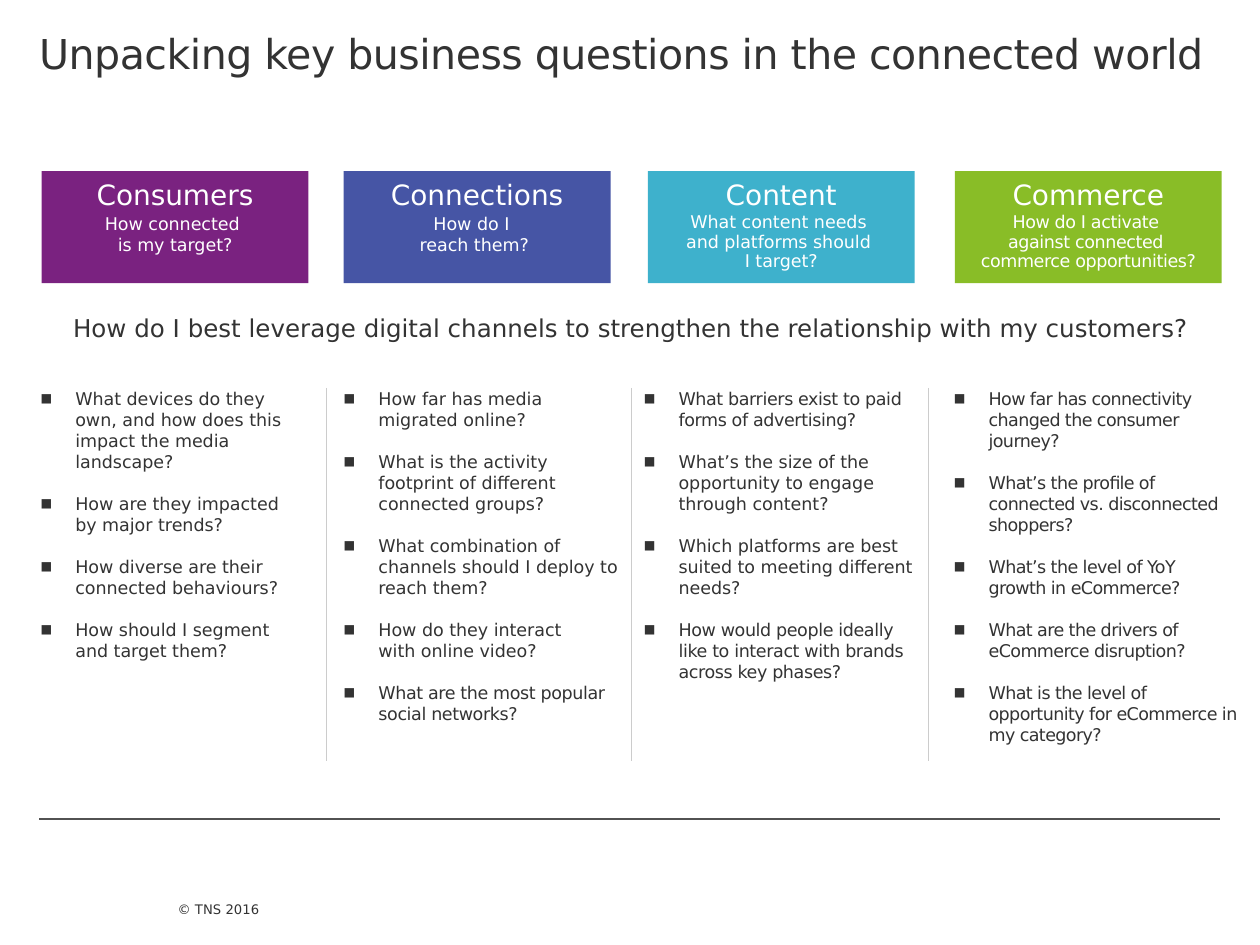
from lxml import etree
from pptx import Presentation
from pptx.dml.color import RGBColor
from pptx.enum.shapes import MSO_CONNECTOR, MSO_SHAPE
from pptx.enum.text import MSO_ANCHOR, PP_ALIGN
from pptx.oxml.ns import qn
from pptx.util import Cm, Pt

RECT = MSO_SHAPE.RECTANGLE
STRAIGHT = MSO_CONNECTOR.STRAIGHT
TOP, BOTTOM = MSO_ANCHOR.TOP, MSO_ANCHOR.BOTTOM
LEFT, CENTER = PP_ALIGN.LEFT, PP_ALIGN.CENTER

COLORS = {
    "text": "333333", "white": "FFFFFF", "rule": "525252", "divider": "CCCCCC",
    "purple": "7A2280", "blue": "4655A5", "cyan": "3EB1CC", "green": "89BD27",
}
CARD_TOP, CARD_W, CARD_H = 3.45, 5.38, 2.26
LIST_TOP, LIST_H = 7.82, 7.0
HEADER_INSETS = (0, 0.2, 0, 0.13)

# Heading, colour, card left, question left, question line spacing (pt),
# question letter spacing (pt), question lines
CARDS = [
    ("Consumers", "purple", 0.84, 0.84, 12, 0, "How connected \nis my target?"),
    ("Connections", "blue", 6.93, 6.87, None, 0, "How do I \nreach them?"),
    ("Content", "cyan", 13.06, 13.06, 11, 0,
     "What content needs \nand platforms should \nI target?"),
    ("Commerce", "green", 19.25, 19.25, 11, -0.2,
     "How do I activate \nagainst connected \ncommerce opportunities?"),
]

# List left, width, items as (text, letter spacing in pt)
LISTS = [
    (0.82, 5.6, [
        ("What devices do they \nown, and how does this impact the media landscape?", 0),
        ("How are they impacted \nby major trends?", 0),
        ("How diverse are their connected behaviours?", 0),
        ("How should I segment \nand target them?", 0),
    ]),
    (6.93, 5.57, [
        ("How far has media migrated online?", 0),
        ("What is the activity footprint of different connected groups?", 0),
        ("What combination of channels should I deploy to reach them?", 0),
        ("How do they interact \nwith online video?", 0),
        ("What are the most popular social networks?", -0.2),
    ]),
    (12.98, 5.6, [
        ("What barriers exist to paid forms of advertising?", -0.2),
        ("What’s the size of the opportunity to engage through content?", 0),
        ("Which platforms are best suited to meeting different needs?", 0),
        ("How would people ideally like to interact with brands across key phases?", -0.2),
    ]),
    (19.23, 5.7, [
        ("How far has connectivity changed the consumer journey?", -0.3),
        ("What’s the profile of connected vs. disconnected shoppers?", -0.3),
        ("What’s the level of YoY growth in eCommerce?", -0.3),
        ("What are the drivers of eCommerce disruption?", -0.3),
        ("What is the level of opportunity for eCommerce in my category?", -0.3),
    ]),
]


class Deck:
    font = "DejaVu Sans"

    def __init__(self, prs):
        self.s = prs.slides.add_slide(prs.slide_layouts[6])

    def color(self, name):
        return RGBColor.from_string(COLORS[name])

    def rect(self, x, y, w, h, fill):
        sp = self.s.shapes.add_shape(RECT, Cm(x), Cm(y), Cm(w), Cm(h))
        sp.shadow.inherit = False
        sp.fill.solid()
        sp.fill.fore_color.rgb = self.color(fill)
        sp.line.fill.background()

    def line(self, x1, y1, x2, y2, color, width):
        sp = self.s.shapes.add_connector(STRAIGHT, Cm(x1), Cm(y1), Cm(x2), Cm(y2))
        sp.line.color.rgb = self.color(color)
        sp.line.width = Pt(width)
        etree.SubElement(sp._element.spPr, qn("a:effectLst"))

    def frame(self, x, y, w, h, insets=(0, 0, 0, 0), anchor=TOP):
        tf = self.s.shapes.add_textbox(Cm(x), Cm(y), Cm(w), Cm(h)).text_frame
        tf.word_wrap = True
        tf.vertical_anchor = anchor
        (tf.margin_left, tf.margin_top,
         tf.margin_right, tf.margin_bottom) = map(Cm, insets)
        return tf

    def add_runs(self, p, text, size, color="text", spacing=0):
        """Add one run per line of text; spacing is between letters, in points."""
        for i, part in enumerate(text.split("\n")):
            if i:
                p.add_line_break()
            r = p.add_run()
            r.text = part
            r.font.name = self.font
            r.font.size = Pt(size)
            r.font.color.rgb = self.color(color)
            if spacing:
                r._r.get_or_add_rPr().set("spc", str(round(spacing * 100)))

    def text(self, box, text, size, color="text", align=LEFT, spacing=0,
             leading=None, **frame):
        p = self.frame(*box, **frame).paragraphs[0]
        p.alignment = align
        if leading:
            p.line_spacing = Pt(leading)
        self.add_runs(p, text, size, color, spacing)

    def bullets(self, box, items):
        tf = self.frame(*box)
        for i, (text, spacing) in enumerate(items):
            p = tf.add_paragraph() if i else tf.paragraphs[0]
            pPr = p._p.get_or_add_pPr()
            pPr.set("marL", str(Cm(0.7)))
            pPr.set("indent", str(-Cm(0.7)))
            etree.SubElement(pPr, qn("a:buSzPct"), val="70000")
            etree.SubElement(pPr, qn("a:buFont"), typeface=self.font)
            etree.SubElement(pPr, qn("a:buChar"), char="■")
            p.space_after = Pt(12)
            self.add_runs(p, text, 10, spacing=spacing)


def main():
    prs = Presentation()
    prs.slide_width, prs.slide_height = Cm(25.4), Cm(19.05)
    deck = Deck(prs)

    deck.line(0.79, 16.51, 24.59, 16.51, "rule", 0.75)
    deck.text((3.58, 17.58, 7.06, 1.47), "© TNS 2016", 7.5,
              insets=(0, 0, 0, 0.79), anchor=BOTTOM)
    deck.text((0.79, 0, 24.36, 2.87),
              "Unpacking key business questions in the connected world", 23.5,
              spacing=-0.3, insets=(0, 0.58, 0, 0))

    for x, w, items in LISTS:
        deck.bullets((x, LIST_TOP, w, LIST_H), items)
    for x in (6.58, 12.73, 18.72):
        deck.line(x, LIST_TOP, x, 15.34, "divider", 0.25)

    deck.text((0.82, 6.17, 23.8, 0.89),
              "How do I best leverage digital channels to strengthen "
              "the relationship with my customers?",
              14, align=CENTER, insets=(0.28, 0.15, 0.28, 0.15))

    for heading, fill, x, question_x, leading, spacing, question in CARDS:
        deck.rect(x, CARD_TOP, CARD_W, CARD_H, fill)
        deck.text((question_x, 4.1, CARD_W, 1.5), question, 10, "white", CENTER,
                  spacing, leading, insets=HEADER_INSETS)
        deck.text((x, 3.38, CARD_W, 1.17), heading, 16, "white", CENTER,
                  insets=HEADER_INSETS)

    prs.save("out.pptx")


if __name__ == "__main__":
    main()
